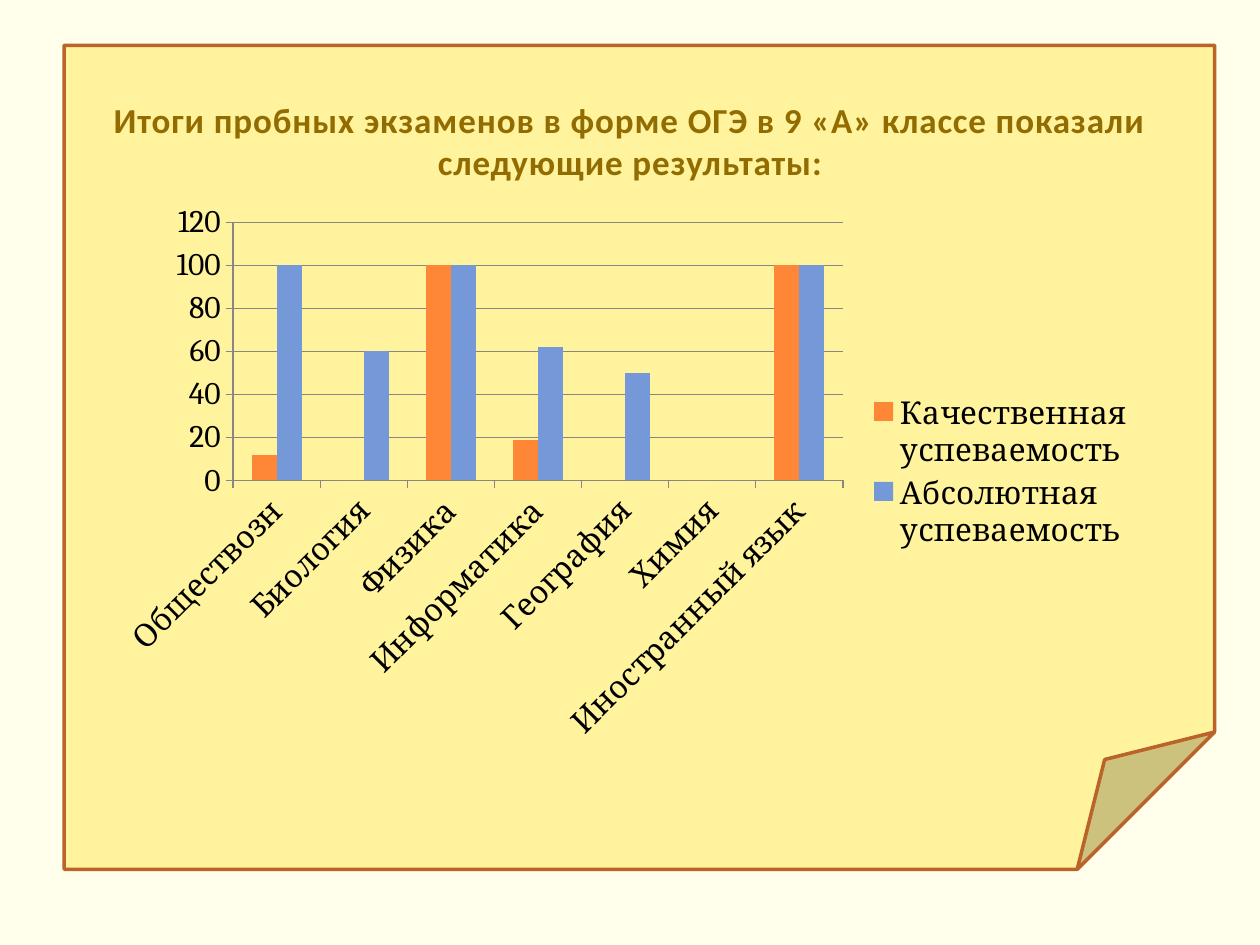
from dataclasses import dataclass
from typing import Any

from pptx import Presentation
from pptx import util as u
from pptx.chart import data
from pptx.dml.color import RGBColor
from pptx.enum import chart as charts, shapes, text

WIDTH, HEIGHT = u.Inches(10), u.Inches(7.5)
COLORS = {
    "background": "FFFFEB",
    "sheet": "FFF39D",
    "border": "BC6329",
    "title": "926C00",
    "labels": "000000",
    "grid": "878787",
    "quality": "FE8637",
    "absolute": "7598D9",
}
SUBJECTS = ["Обществозн", "Биология", "Физика", "Информатика",
            "География", "Химия", "Иностранный язык"]
RESULTS = [
    ("Качественная успеваемость", "quality", (12, 0, 100, 19, 0, 0, 100)),
    ("Абсолютная успеваемость", "absolute", (100, 60, 100, 62, 50, 0, 100)),
]


def color(name):
    return RGBColor.from_string(COLORS[name])


def share(left, top, width, height):
    return (int(WIDTH * left), int(HEIGHT * top),
            int(WIDTH * width), int(HEIGHT * height))


@dataclass
class Board:
    slide: Any
    title_font: str = "Calibri"
    chart_font: str = "Cambria"

    def background(self):
        fill = self.slide.background.fill
        fill.solid()
        fill.fore_color.rgb = color("background")

    def sheet(self, *area):
        sheet = self.slide.shapes.add_shape(
            shapes.MSO_SHAPE.FOLDED_CORNER, *share(*area))
        sheet.shadow.inherit = False
        sheet.fill.solid()
        sheet.fill.fore_color.rgb = color("sheet")
        sheet.line.color.rgb = color("border")
        sheet.line.width = u.Pt(2)

    def title(self, wording, *area):
        frame = self.slide.shapes.add_textbox(*share(*area)).text_frame
        frame.word_wrap = True
        frame.vertical_anchor = text.MSO_ANCHOR.MIDDLE
        heading = frame.paragraphs[0]
        heading.alignment = text.PP_ALIGN.CENTER
        run = heading.add_run()
        run.text = wording
        run.font._element.set("spc", "50")
        font = heading.font
        font.name, font.size, font.bold = self.title_font, u.Pt(20), True
        font.color.rgb = color("title")

    def columns(self, subjects, results, *area):
        table = data.CategoryChartData()
        table.categories = subjects
        for name, _, values in results:
            table.add_series(name, values)
        chart = self.slide.shapes.add_chart(
            charts.XL_CHART_TYPE.COLUMN_CLUSTERED, *share(*area), table).chart
        chart.has_title = False
        chart.font.name, chart.font.size = self.chart_font, u.Pt(18)
        chart.font.color.rgb = color("labels")
        chart.has_legend = True
        chart.legend.position = charts.XL_LEGEND_POSITION.RIGHT
        chart.legend.include_in_layout = False
        plot = chart.plots[0]
        plot.vary_by_categories = False
        plot.gap_width = 150
        for series, (_, tone, _) in zip(plot.series, results):
            series.format.fill.solid()
            series.format.fill.fore_color.rgb = color(tone)
            series.invert_if_negative = False
        for axis in (chart.category_axis, chart.value_axis):
            axis.major_tick_mark = charts.XL_TICK_MARK.OUTSIDE
            axis.format.line.color.rgb = color("grid")
        chart.value_axis.has_major_gridlines = True
        chart.value_axis.major_gridlines.format.line.color.rgb = color("grid")


def main():
    deck = Presentation()
    deck.slide_width, deck.slide_height = WIDTH, HEIGHT
    board = Board(deck.slides.add_slide(deck.slide_layouts[6]))
    board.background()
    board.sheet(0.051, 0.048, 0.913, 0.872)
    board.title("Итоги пробных экзаменов в форме ОГЭ в 9 «А» классе показали "
                "следующие результаты:", 0.05, 0.091, 0.9, 0.116)
    board.columns(SUBJECTS, RESULTS, 0.083, 0.204, 0.827, 0.592)
    deck.save("out.pptx")


if __name__ == "__main__":
    main()
